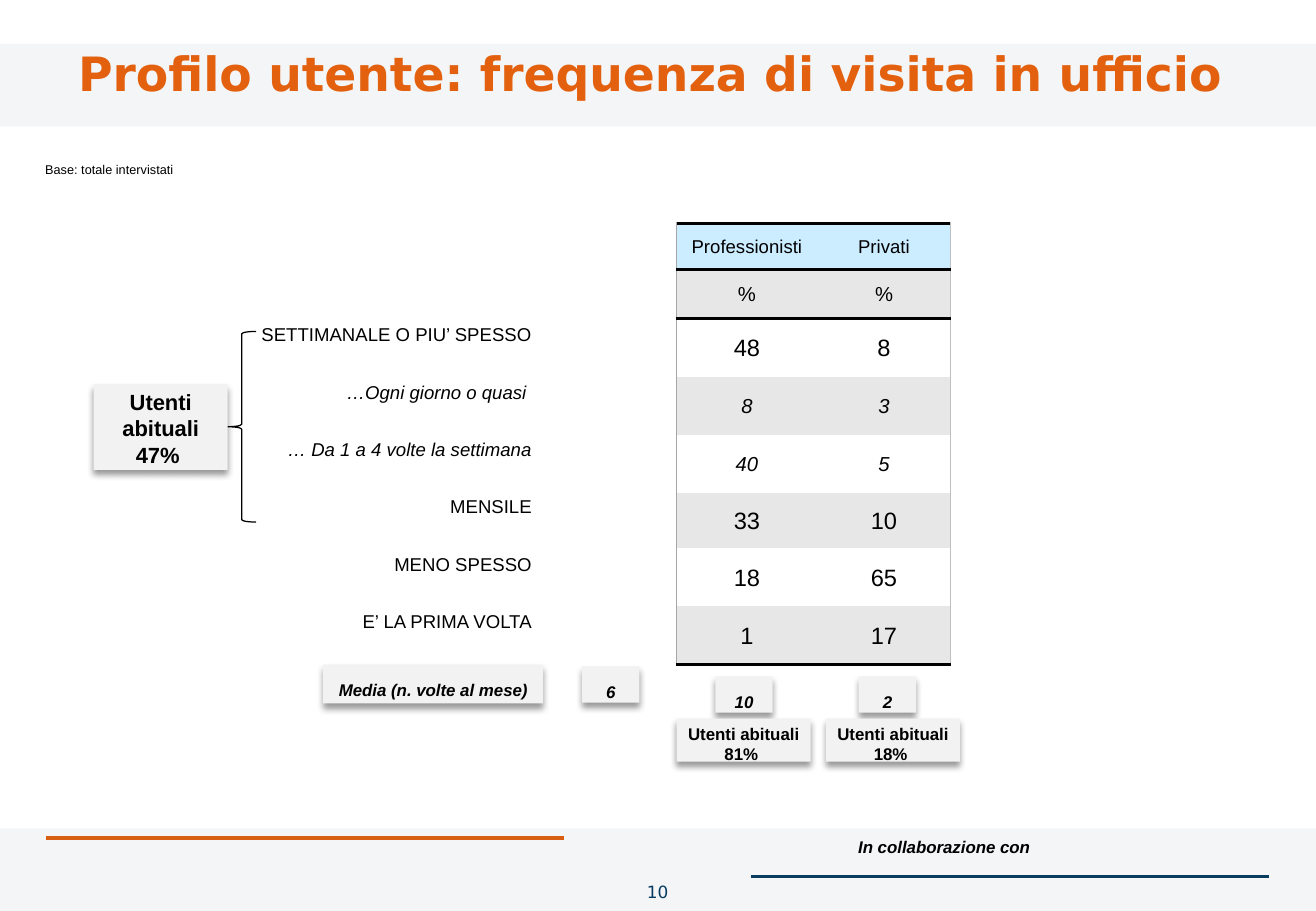
from dataclasses import dataclass

import pptx
import pptx.dml.color
import pptx.enum.shapes
import pptx.enum.text
import pptx.oxml.ns
import pptx.util
from lxml import etree

Pt = pptx.util.Pt
qn = pptx.oxml.ns.qn
Align = pptx.enum.text.PP_ALIGN
Anchor = pptx.enum.text.MSO_ANCHOR
Shape = pptx.enum.shapes.MSO_SHAPE
NO_STYLE_NO_GRID = "{2D5ABB26-0587-4C30-8999-92F81FD0307C}"


@dataclass(frozen=True)
class Theme:
    font: str = "Arial"
    heading_font: str = "DejaVu Sans"
    orange: str = "E3600F"
    navy: str = "073C62"
    band: str = "1E3D5C"
    black: str = "000000"
    white: str = "FFFFFF"
    badge: str = "F2F2F2"
    header: str = "CCECFF"
    stripe: str = "E7E7E7"
    left_edge: str = "A6A6A6"
    right_edge: str = "BFBFBF"
    title: float = 28
    value: float = 14
    badge_large: float = 13
    detail: float = 12
    label: float = 11
    small: float = 10
    note: float = 7.5


THEME = Theme()

FREQUENCIES = [  # label, italic
    ("SETTIMANALE O PIU’ SPESSO", False),
    ("…Ogni giorno o quasi ", True),
    ("… Da 1 a 4 volte la settimana", True),
    ("MENSILE", False),
    ("MENO SPESSO", False),
    ("E’ LA PRIMA VOLTA", False),
]

PERCENTAGES = [  # professionals, private users, row height, size, italic
    ("Professionisti", "Privati", 27, THEME.label, False),
    ("%", "%", 29.5, THEME.detail, False),
    ("48", "8", 34.5, THEME.value, False),
    ("8", "3", 34.5, THEME.detail, True),
    ("40", "5", 34.5, THEME.detail, True),
    ("33", "10", 32.5, THEME.value, False),
    ("18", "65", 34.5, THEME.value, False),
    ("1", "17", 34.5, THEME.value, False),
]


def rgb(color):
    return pptx.dml.color.RGBColor.from_string(color)


def write_text(frame, text, size, color=THEME.black, font=THEME.font, bold=False,
               italic=False, align=Align.CENTER, spacing=None):
    """Write one paragraph for each line of text."""
    for index, line in enumerate(text.split("\n")):
        paragraph = frame.paragraphs[0] if index == 0 else frame.add_paragraph()
        paragraph.alignment = align
        if spacing:
            paragraph.line_spacing = spacing
        run = paragraph.add_run()
        run.text = line
        run.font.size = Pt(size)
        run.font.name = font
        run.font.bold = bold
        run.font.italic = italic
        run.font.color.rgb = rgb(color)


def set_frame(frame, anchor=Anchor.TOP, horizontal=5.75, vertical=2.9):
    frame.word_wrap = True
    frame.vertical_anchor = anchor
    frame.margin_left = frame.margin_right = Pt(horizontal)
    frame.margin_top = frame.margin_bottom = Pt(vertical)


def add_text(slide, left, top, width, height, text, anchor=Anchor.TOP, **style):
    box = slide.shapes.add_textbox(Pt(left), Pt(top), Pt(width), Pt(height))
    set_frame(box.text_frame, anchor)
    write_text(box.text_frame, text, **style)


def add_rule(slide, left, top, width, color):
    line = slide.shapes.add_connector(
        pptx.enum.shapes.MSO_CONNECTOR.STRAIGHT,
        Pt(left), Pt(top), Pt(left + width), Pt(top))
    line.line.color.rgb = rgb(color)
    line.line.width = Pt(2)
    etree.SubElement(line.element.spPr, qn("a:effectLst"))


def add_band(slide, top):
    band = slide.shapes.add_shape(Shape.RECTANGLE, 0, Pt(top), Pt(780), Pt(49))
    band.shadow.inherit = False
    band.line.fill.background()
    band.fill.solid()
    band.fill.fore_color.rgb = rgb(THEME.band)
    color = band.element.spPr.find(qn("a:solidFill"))[0]
    etree.SubElement(color, qn("a:alpha"), val="5000")


def add_badge(slide, left, top, width, height, text, **style):
    """Add a light box with bold text and a soft shadow below it."""
    badge = slide.shapes.add_shape(
        Shape.RECTANGLE, Pt(left), Pt(top), Pt(width), Pt(height))
    badge.fill.solid()
    badge.fill.fore_color.rgb = rgb(THEME.badge)
    badge.line.fill.background()
    badge.shadow.inherit = False
    shadow = etree.SubElement(
        badge.element.spPr.find(qn("a:effectLst")), qn("a:outerShdw"),
        blurRad=str(Pt(4)), dist=str(Pt(3)), dir="5400000", rotWithShape="0")
    color = etree.SubElement(shadow, qn("a:srgbClr"), val=THEME.black)
    etree.SubElement(color, qn("a:alpha"), val="40000")
    set_frame(badge.text_frame)
    write_text(badge.text_frame, text, bold=True, **style)


def add_brace(slide, left, top, width, height):
    brace = slide.shapes.add_shape(
        Shape.LEFT_BRACE, Pt(left), Pt(top), Pt(width), Pt(height))
    brace.shadow.inherit = False
    brace.fill.background()
    brace.line.color.rgb = rgb(THEME.black)
    brace.line.width = Pt(0.75)


def add_plain_table(slide, left, top, widths, heights):
    frame = slide.shapes.add_table(
        len(heights), len(widths), Pt(left), Pt(top), Pt(sum(widths)), Pt(sum(heights)))
    next(frame.element.iter(qn("a:tableStyleId"))).text = NO_STYLE_NO_GRID
    table = frame.table
    table.first_row = table.horz_banding = False
    for column, width in zip(table.columns, widths):
        column.width = Pt(width)
    for row, height in zip(table.rows, heights):
        row.height = Pt(height)
    return table


def fill_cell(cell, text, fill=None, borders=None, **style):
    """Borders map a side (L, R, T or B, in this order) to colour and width."""
    cell.vertical_anchor = Anchor.MIDDLE
    cell.margin_left = cell.margin_right = cell.margin_top = Pt(0.75)
    cell.margin_bottom = 0
    write_text(cell.text_frame, text, **style)
    properties = cell._tc.get_or_add_tcPr()
    for side, (color, width) in (borders or {}).items():
        line = etree.SubElement(properties, qn(f"a:ln{side}"), w=str(Pt(width)))
        solid = etree.SubElement(line, qn("a:solidFill"))
        etree.SubElement(solid, qn("a:srgbClr"), val=color)
    if fill:
        cell.fill.solid()
        cell.fill.fore_color.rgb = rgb(fill)
    else:
        cell.fill.background()


def add_frequency_labels(slide):
    table = add_plain_table(slide, 123.5, 181.5, [192.5], [34] * len(FREQUENCIES))
    for row, (label, italic) in enumerate(FREQUENCIES):
        fill_cell(table.cell(row, 0), label, size=THEME.label, italic=italic,
                  align=Align.RIGHT)


def add_percentage_table(slide):
    heights = [row[2] for row in PERCENTAGES]
    table = add_plain_table(slide, 401, 132.5, [83.5, 79], heights)
    heavy = (THEME.black, 2)
    edges = [{"L": (THEME.left_edge, 1)}, {"R": (THEME.right_edge, 1)}]
    for row, (*values, _, size, italic) in enumerate(PERCENTAGES):
        fill = THEME.header if row == 0 else (THEME.white, THEME.stripe)[row % 2]
        for column, value in enumerate(values):
            borders = dict(edges[column])
            if row <= 1:
                borders["T"] = heavy
            if row in (0, len(PERCENTAGES) - 1):
                borders["B"] = heavy
            fill_cell(table.cell(row, column), value, fill, borders,
                      size=size, italic=italic)


def main():
    presentation = pptx.Presentation()
    presentation.slide_width, presentation.slide_height = Pt(780), Pt(540)
    slide = presentation.slides.add_slide(presentation.slide_layouts[6])

    add_rule(slide, 27.5, 496.75, 307, THEME.orange)
    add_rule(slide, 445, 519.5, 307, THEME.navy)
    for top in (491, 26):
        add_band(slide, top)
    add_text(slide, 471.5, 493, 147.5, 19, "In collaborazione con ", size=THEME.small,
             bold=True, italic=True, align=Align.RIGHT)
    add_text(slide, 0, -2, 780, 90, "Profilo utente: frequenza di visita in ufficio ",
             Anchor.MIDDLE, size=THEME.title, color=THEME.orange,
             font=THEME.heading_font, bold=True)
    add_text(slide, 355.5, 520, 68.5, 20, "10", size=THEME.small, color=THEME.navy,
             font=THEME.heading_font)

    add_frequency_labels(slide)
    add_percentage_table(slide)

    for left, top, width, height, text in [
        (191.5, 394, 130.5, 23, "Media (n. volte al mese)"),
        (345, 395, 34, 21.5, "6"),
        (424, 401, 34, 21.5, "10"),
        (509, 401, 34, 21.5, "2"),
    ]:
        add_badge(slide, left, top, width, height, text, size=THEME.small,
                  italic=True, spacing=1.5)
    add_brace(slide, 134.75, 196.5, 17, 113)
    for left, top, height, share, size in [
        (55.5, 227.5, 51, "47% ", THEME.badge_large),
        (401, 426, 25.5, "81% ", THEME.small),
        (489.5, 426, 25.5, "18% ", THEME.small),
    ]:
        add_badge(slide, left, top, 79.5, height, f"Utenti abituali\n{share}", size=size)
    add_text(slide, 21, 88.5, 174, 14.5, "Base: totale intervistati", size=THEME.note,
             align=Align.JUSTIFY, spacing=1.5)

    presentation.save("out.pptx")


if __name__ == "__main__":
    main()
